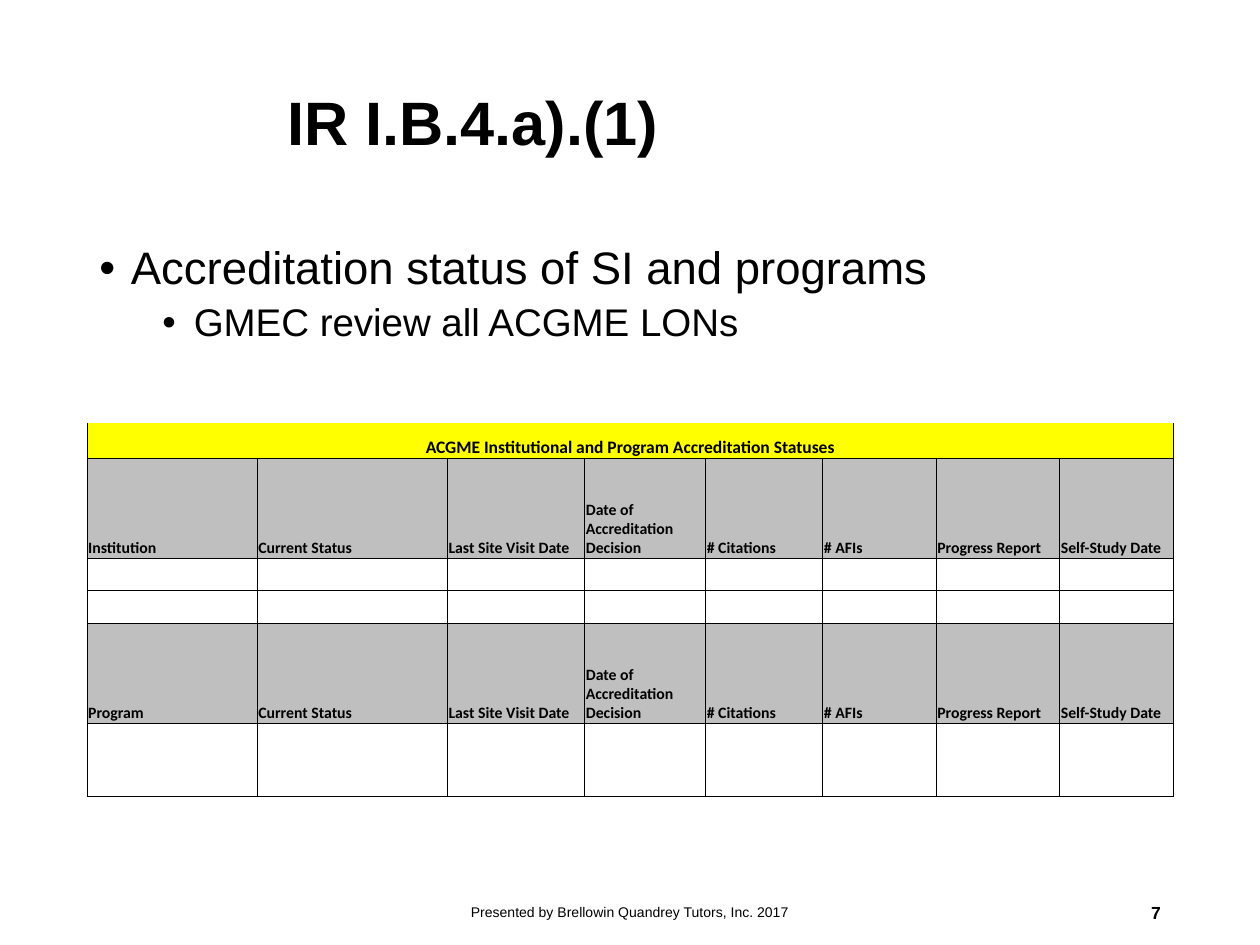
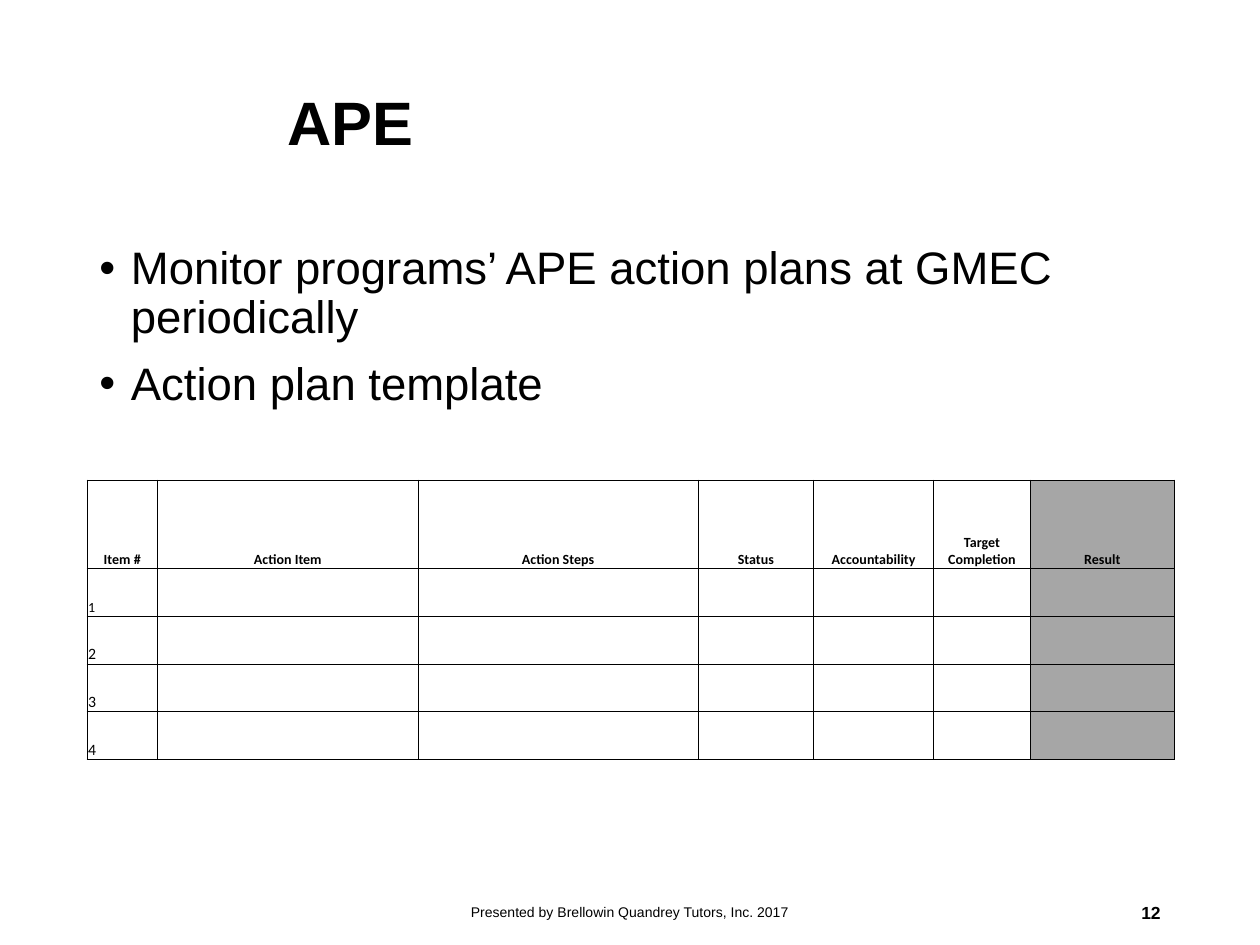
from dataclasses import dataclass

from lxml import etree
from pptx import Presentation
from pptx.dml.color import RGBColor
from pptx.enum.text import MSO_ANCHOR, MSO_AUTO_SIZE, PP_ALIGN
from pptx.oxml.ns import qn
from pptx.util import Emu, Pt

LEFT, MID, RIGHT = PP_ALIGN.LEFT, PP_ALIGN.CENTER, PP_ALIGN.RIGHT
CENTRE, BASE, TOP = MSO_ANCHOR.MIDDLE, MSO_ANCHOR.BOTTOM, MSO_ANCHOR.TOP
NO_FIT = MSO_AUTO_SIZE.NONE
SCALE = 9144  # EMU in one px, 100 px to the inch


def px(count):
    return Emu(count * SCALE)


@dataclass(frozen=True)
class Theme:
    ink: str = "000000"
    yellow: str = "FFFF00"
    silver: str = "BFBFBF"
    grey: str = "A6A6A6"
    face: str = "Arial"
    grid_face: str = "Calibri"
    title: int = 35
    levels: tuple = (26, 22)
    foot: int = 8
    number: int = 10
    banner: int = 10
    cell: int = 9
    small: int = 8
    rule: float = 0.5


@dataclass
class Cell:
    text: str = ""
    fill: str = ""
    size: int = 9
    bold: bool = False
    align: int = LEFT


class Deck:
    def __init__(self, theme):
        self.theme = theme
        self.prs = Presentation()
        self.prs.slide_width, self.prs.slide_height = px(1000), px(750)
        self.slide = None

    def style(self, para, size, bold=False, face=None):
        font = para.font
        font.name = face or self.theme.face
        font.size = Pt(size)
        font.bold = bold
        font.color.rgb = RGBColor.from_string(self.theme.ink)

    def page(self, title, number):
        """Start a slide with its title, footer and number."""
        self.slide = self.prs.slides.add_slide(self.prs.slide_layouts[5])
        self.title(title)
        self.label("Presented by Brellowin Quandrey Tutors, Inc. 2017",
                   (331, 704, 338, 40), self.theme.foot, MID)
        self.label(str(number), (706, 704, 225, 40),
                   self.theme.number, RIGHT, True)

    def title(self, text):
        shape = self.slide.shapes.title
        shape.left, shape.top, shape.width, shape.height = map(
            px, (218, 27, 714, 145))
        frame = shape.text_frame
        frame.text = text
        frame.auto_size = NO_FIT
        frame.vertical_anchor = CENTRE
        para = frame.paragraphs[0]
        para.alignment = LEFT
        para.line_spacing = 0.9
        self.style(para, self.theme.title, True)

    def frame(self, box, anchor):
        frame = self.slide.shapes.add_textbox(*map(px, box)).text_frame
        frame.word_wrap = True
        frame.vertical_anchor = anchor
        return frame

    def label(self, text, box, size, align, bold=False):
        para = self.frame(box, CENTRE).paragraphs[0]
        para.text = text
        para.alignment = align
        self.style(para, size, bold)

    def bullets(self, items):
        """Write (level, text) pairs as a bulleted list."""
        frame = self.frame((69, 190, 862, 485), TOP)
        for spot, (level, text) in enumerate(items):
            para = frame.add_paragraph() if spot else frame.paragraphs[0]
            para.text = text
            para.level = level
            para.line_spacing = 0.9
            if spot:
                para.space_before = Pt(5 if level else 10)
            props = para._p.get_or_add_pPr()
            props.set("marL", str(px(25 + 50 * level)))
            props.set("indent", str(px(-25)))
            etree.SubElement(props, qn("a:buFont"), typeface="Arial")
            etree.SubElement(props, qn("a:buChar"), char="•")
            self.style(para, self.theme.levels[level])

    def border(self, cell, bare):
        """Rule all four sides of a cell, leaving out those in bare."""
        props = cell._tc.get_or_add_tcPr()
        for side in "LRTB":
            line = etree.SubElement(props, qn("a:ln" + side),
                                    w=str(Pt(self.theme.rule)))
            if side in bare:
                etree.SubElement(line, qn("a:noFill"))
            else:
                fill = etree.SubElement(line, qn("a:solidFill"))
                etree.SubElement(fill, qn("a:srgbClr"), val=self.theme.ink)

    def paint(self, cell, data, bare):
        cell.margin_left = cell.margin_right = cell.margin_top = px(1)
        cell.margin_bottom = 0
        cell.vertical_anchor = BASE
        self.border(cell, bare)
        if data.fill:
            cell.fill.solid()
            cell.fill.fore_color.rgb = RGBColor.from_string(data.fill)
        else:
            cell.fill.background()
        para = cell.text_frame.paragraphs[0]
        para.alignment = data.align
        self.style(para, data.size, data.bold, self.theme.grid_face)
        if data.text:
            para.text = data.text
        else:
            # An empty cell keeps its row low through its end mark.
            etree.SubElement(para._p, qn("a:endParaRPr"),
                             sz=str(data.size * 100))

    def table(self, top, cols, rows, cells, banner=False):
        """Draw the cells; with banner, the first row is one wide cell."""
        grid = self.slide.shapes.add_table(
            len(rows), len(cols), px(69), px(top),
            px(sum(cols)), px(sum(rows))).table
        grid.first_row = grid.horz_banding = False
        for col, width in zip(grid.columns, cols):
            col.width = px(width)
        for row, height in zip(grid.rows, rows):
            row.height = px(height)
        for y, line in enumerate(cells):
            for x, data in enumerate(line):
                self.paint(grid.cell(y, x), data,
                           "T" if banner and y == 0 else "")
        if banner:
            grid.cell(0, 0).merge(grid.cell(0, len(cols) - 1))


def status(deck):
    theme = deck.theme
    deck.page("IR I.B.4.a).(1)", 7)
    deck.bullets([(0, "Accreditation status of SI and programs"),
                  (1, "GMEC review all ACGME LONs")])
    cols = (135, 151, 109, 96, 93, 90, 98, 90)
    heads = ("Current Status", "Last Site Visit Date",
             "Date of Accreditation Decision", "# Citations", "# AFIs",
             "Progress Report", "Self-Study Date")

    def header(first):
        return [Cell(text, theme.silver, theme.cell, True)
                for text in (first, *heads)]

    blank = [Cell(size=theme.cell)] * len(cols)
    banner = [Cell("ACGME Institutional and Program Accreditation Statuses",
                   theme.yellow, theme.banner, True, MID)]
    banner += [Cell(fill=theme.yellow)] * len(heads)
    deck.table(336, cols, (28, 79, 26, 26, 79, 58),
               [banner, header("Institution"), blank, blank,
                header("Program"), blank], banner=True)


def action(deck):
    theme = deck.theme
    deck.page("APE", 12)
    deck.bullets([
        (0, "Monitor programs’ APE action plans at GMEC periodically"),
        (0, "Action plan template")])
    cols = (56, 207, 222, 92, 95, 77, 114)
    heads = ("Item #", "Action Item", "Action Steps", "Status",
             "Accountability", "Target Completion", "Result")
    cells = [[Cell(text, theme.grey if text == "Result" else "",
                   theme.small, True, MID) for text in heads]]
    for item in range(1, 5):
        size = theme.small if item == 1 else theme.cell
        cells.append([Cell(str(item), size=size),
                      *[Cell()] * (len(cols) - 2), Cell(fill=theme.grey)])
    deck.table(381, cols, (70, 38, 38, 38, 38), cells)


def main():
    deck = Deck(Theme())
    status(deck)
    action(deck)
    deck.prs.save("out.pptx")


if __name__ == "__main__":
    main()
